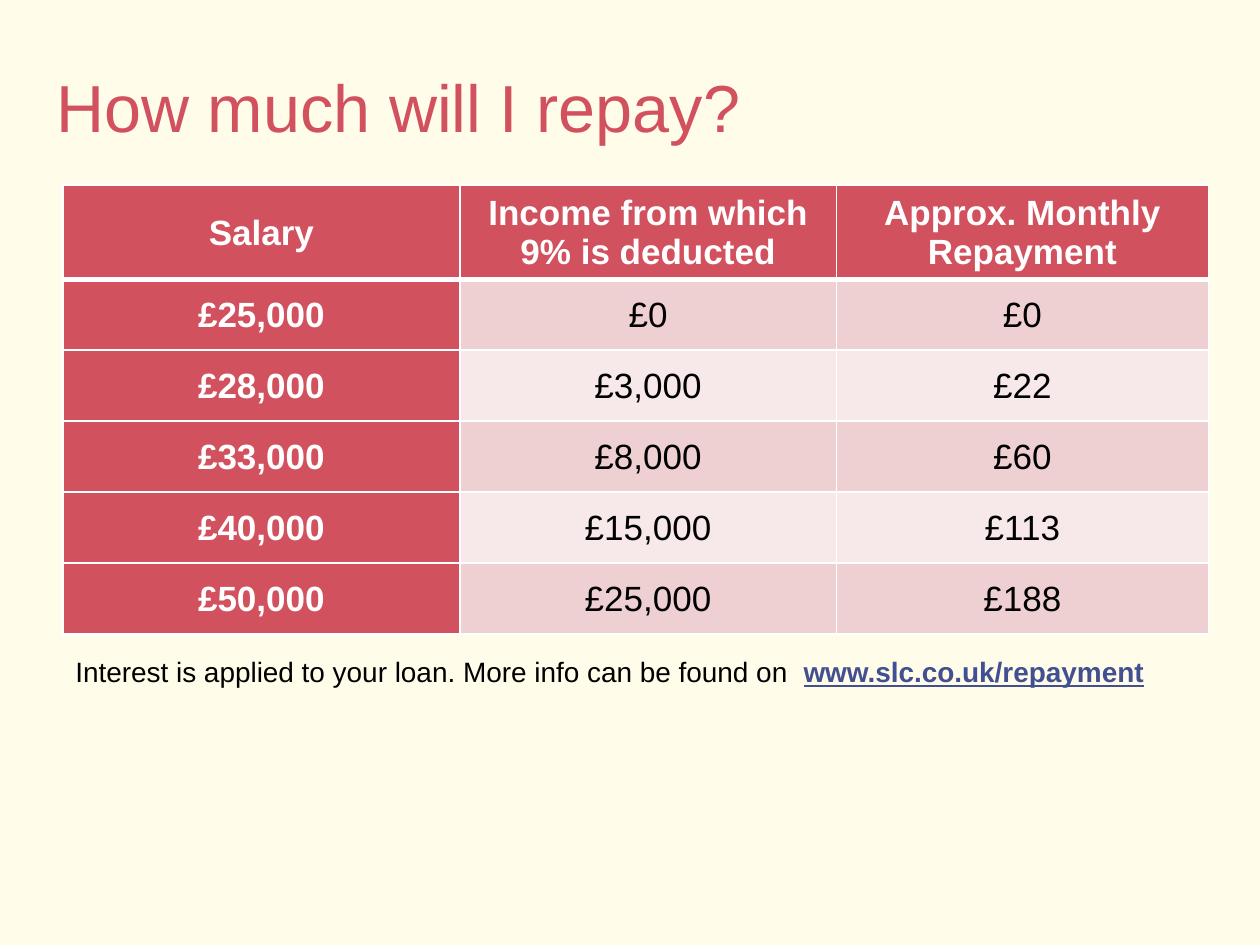
from lxml.etree import SubElement
from pptx import Presentation
from pptx.dml.color import RGBColor
from pptx.enum.text import MSO_ANCHOR, PP_ALIGN
from pptx.oxml.ns import qn
from pptx.util import Cm, Pt

TITLE = "How much will I repay?"
ROWS = [
    ("Salary", "Income from which 9% is deducted", "Approx. Monthly Repayment"),
    ("£25,000", "£0", "£0"),
    ("£28,000", "£3,000", "£22"),
    ("£33,000", "£8,000", "£60"),
    ("£40,000", "£15,000", "£113"),
    ("£50,000", "£25,000", "£188"),
]
NOTE = "Interest is applied to your loan. More info can be found on  "
ADDRESS = "www.slc.co.uk/repayment"

CREAM = RGBColor(0xFF, 0xFD, 0xEA)
RED = RGBColor(0xD2, 0x51, 0x5E)
PINK = RGBColor(0xEE, 0xD0, 0xD2)
PALE_PINK = RGBColor(0xF7, 0xE9, 0xEA)
WHITE = RGBColor(0xFF, 0xFF, 0xFF)
BLACK = RGBColor(0x00, 0x00, 0x00)
BLUE = RGBColor(0x42, 0x4F, 0x90)

LEFT = Cm(1.27)
COLUMN_WIDTHS = [Cm(8), Cm(7.59), Cm(7.5)]
HEADER_HEIGHT = Cm(1.9)
ROW_HEIGHT = Cm(1.43)
TABLE_WIDTH = sum(COLUMN_WIDTHS)


def add_text(para, text, size, color, bold=False, underline=False):
    span = para.add_run()
    span.text = text
    span.font.name = "Arial"
    span.font.size = Pt(size)
    span.font.color.rgb = color
    span.font.bold = bold
    span.font.underline = underline


def add_border(cell, side, points):
    line = SubElement(cell._tc.get_or_add_tcPr(), qn(f"a:ln{side}"), w=str(Pt(points)))
    fill = SubElement(line, qn("a:solidFill"))
    SubElement(fill, qn("a:srgbClr"), val=str(WHITE))


def fill_cell(cell, text, row, column):
    heading = row == 0 or column == 0
    thick_side = {0: "B", 1: "T"}.get(row)
    for side in "LRTB":
        add_border(cell, side, 3 if side == thick_side else 1)
    cell.fill.solid()
    cell.fill.fore_color.rgb = RED if heading else PINK if row % 2 else PALE_PINK
    cell.margin_left = cell.margin_right = cell.margin_top = Cm(0.03)
    cell.margin_bottom = 0
    cell.vertical_anchor = MSO_ANCHOR.MIDDLE
    para = cell.text_frame.paragraphs[0]
    para.alignment = PP_ALIGN.CENTER
    add_text(para, text, 20, WHITE if heading else BLACK, bold=heading)


def add_title(page):
    frame = page.shapes.add_textbox(Cm(1.14), Cm(0.05), Cm(23.01), Cm(2.9)).text_frame
    frame.word_wrap = True
    frame.vertical_anchor = MSO_ANCHOR.BOTTOM
    frame.margin_left = frame.margin_right = frame.margin_top = frame.margin_bottom = 0
    add_text(frame.paragraphs[0], TITLE, 38, RED)


def add_repayments(page):
    height = HEADER_HEIGHT + ROW_HEIGHT * (len(ROWS) - 1)
    table = page.shapes.add_table(
        len(ROWS), len(COLUMN_WIDTHS), LEFT, Cm(3.73), TABLE_WIDTH, height
    ).table
    for column, width in zip(table.columns, COLUMN_WIDTHS):
        column.width = width
    for row, texts in enumerate(ROWS):
        table.rows[row].height = ROW_HEIGHT if row else HEADER_HEIGHT
        for column, text in enumerate(texts):
            fill_cell(table.cell(row, column), text, row, column)


def add_note(page):
    frame = page.shapes.add_textbox(LEFT, Cm(13.08), TABLE_WIDTH, Cm(1.7)).text_frame
    frame.word_wrap = True
    para = frame.paragraphs[0]
    add_text(para, NOTE, 16, BLACK)
    add_text(para, ADDRESS, 16, BLUE, bold=True, underline=True)


def main():
    deck = Presentation()
    deck.slide_width, deck.slide_height = Cm(25.4), Cm(19.05)
    page = deck.slides.add_slide(deck.slide_layouts[6])
    page.background.fill.solid()
    page.background.fill.fore_color.rgb = CREAM
    add_title(page)
    add_repayments(page)
    add_note(page)
    deck.save("out.pptx")


if __name__ == "__main__":
    main()
